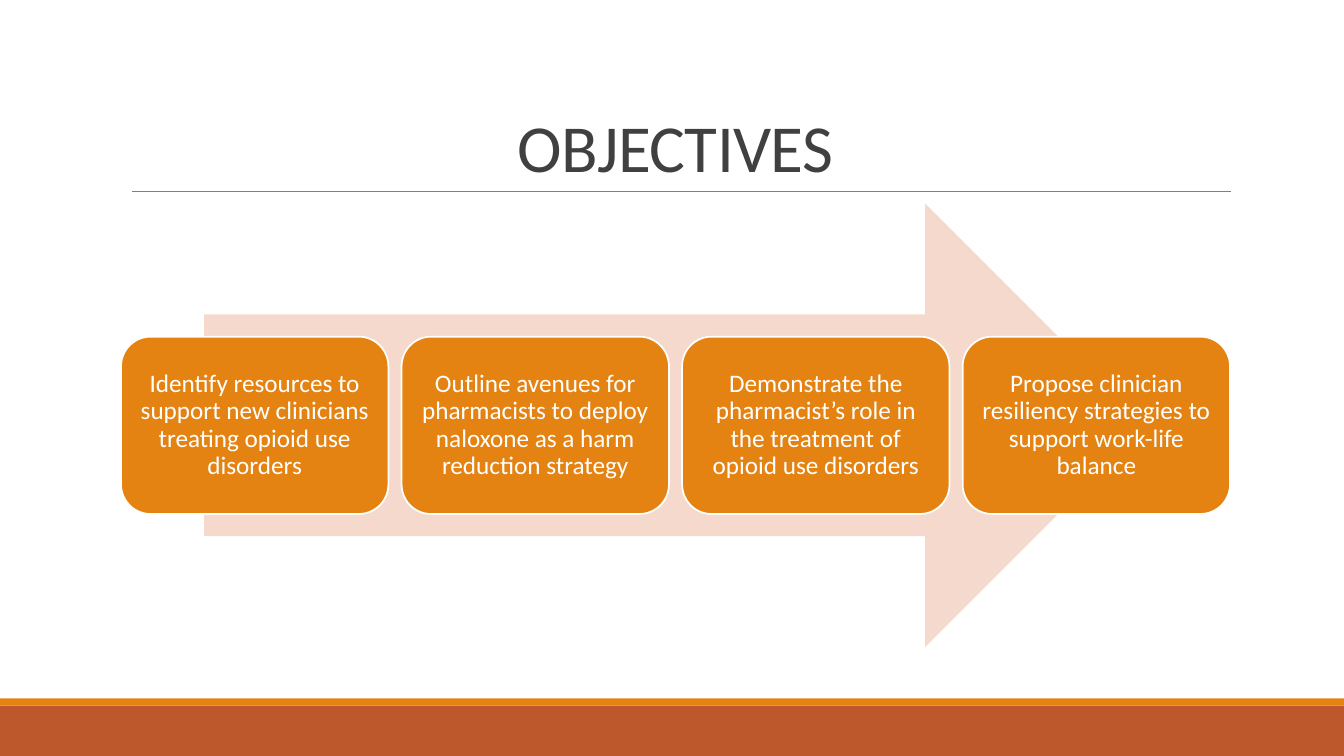
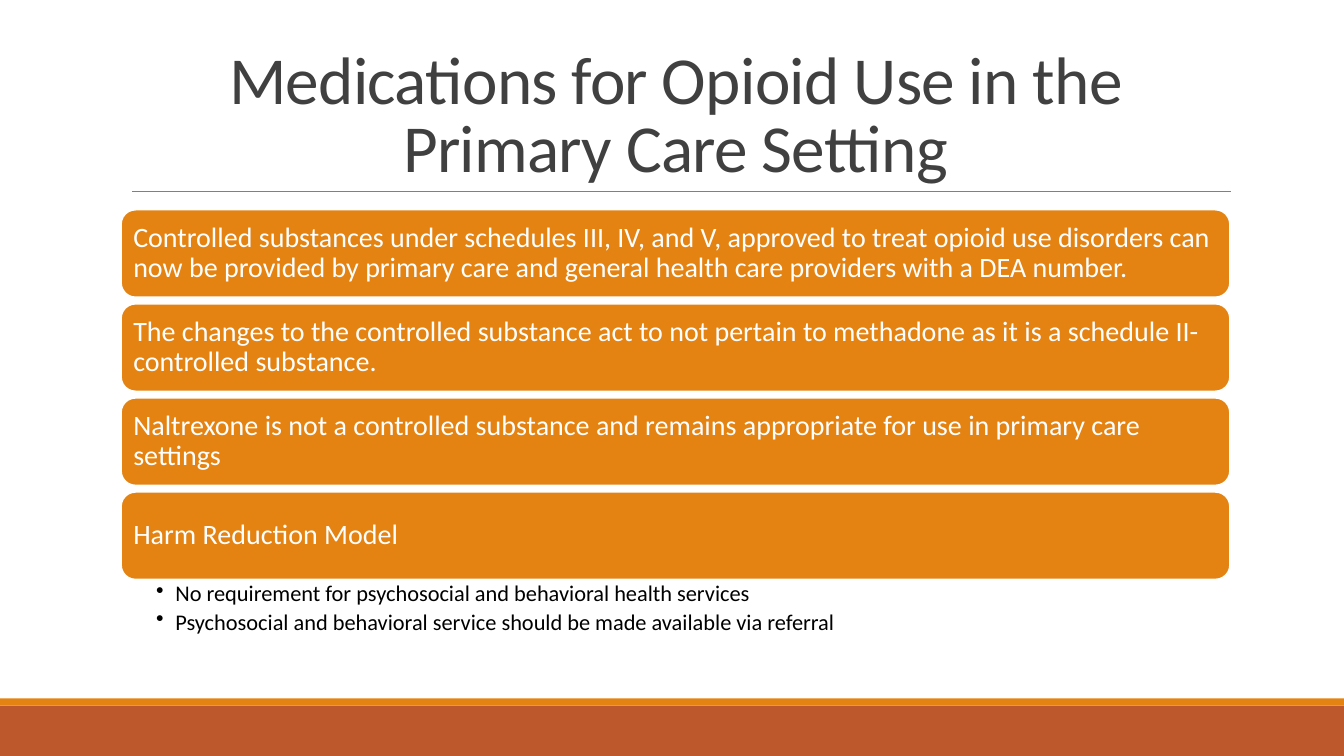
from lxml import etree
from pptx import Presentation
from pptx import util as u
from pptx.dml.color import RGBColor
from pptx.enum import shapes, text
from pptx.oxml import ns

FONT = "Calibri"
ORANGE, RUST, PEACH = "E48312", "BD582C", "F5D9CC"
WHITE, BLACK, DARK, GRAY = "FFFFFF", "000000", "404040", "808080"

OBJECTIVES = [
    "Identify resources to support new clinicians treating opioid use disorders",
    "Outline avenues for pharmacists to deploy naloxone as a harm reduction strategy",
    "Demonstrate the pharmacist’s role in the treatment of opioid use disorders",
    "Propose clinician resiliency strategies to support work-life balance",
]
MEDICATION_POINTS = [
    "Controlled substances under schedules III, IV, and V, approved to treat opioid use "
    "disorders can now be provided by primary care and general health care providers "
    "with a DEA number.",
    "The changes to the controlled substance act to not pertain to methadone as it is a "
    "schedule II-controlled substance.",
    "Naltrexone is not a controlled substance and remains appropriate for use in primary "
    "care settings",
    "Harm Reduction Model",
]
HARM_REDUCTION = [
    "No requirement for psychosocial and behavioral health services",
    "Psychosocial and behavioral service should be made available via referral",
]


def color(value):
    """Turn a hex string into a colour."""
    return RGBColor.from_string(value)


def add_block(slide, kind, box, fill, line=None):
    """Add a flat preset shape in box, given as left, top, width, height."""
    shape = slide.shapes.add_shape(kind, *map(u.Inches, box))
    shape.shadow.inherit = False
    shape.fill.solid()
    shape.fill.fore_color.rgb = color(fill)
    if line:
        shape.line.color.rgb = color(line)
        shape.line.width = u.Pt(1.25)
    else:
        shape.line.fill.background()
    return shape


def write(shape, lines, size, ink, align, anchor, insets, spacing=0.9, after=0):
    """Write one paragraph per line and return the paragraphs."""
    frame = shape.text_frame
    frame.word_wrap = True
    frame.vertical_anchor = anchor
    (frame.margin_left, frame.margin_top,
     frame.margin_right, frame.margin_bottom) = map(u.Inches, insets)
    frame.text = "\n".join(lines)
    for paragraph in frame.paragraphs:
        paragraph.alignment = align
        paragraph.line_spacing = spacing
        paragraph.space_after = u.Pt(after)
        for run in paragraph.runs:
            run.font.name = FONT
            run.font.size = u.Pt(size)
            run.font.color.rgb = color(ink)
    return frame.paragraphs


def add_base(presentation, title):
    """Add a blank slide with the footer bands, title and title rule."""
    slide = presentation.slides.add_slide(presentation.slide_layouts[6])
    rectangle = shapes.MSO_SHAPE.RECTANGLE
    add_block(slide, rectangle, (0, 7, 13.33, 0.5), RUST)
    add_block(slide, rectangle, (0, 6.93, 13.33, 0.07), ORANGE)
    ends = map(u.Inches, (1.31, 1.9, 12.21, 1.9))
    rule = slide.shapes.add_connector(shapes.MSO_CONNECTOR.STRAIGHT, *ends)
    rule.line.color.rgb = color(GRAY)
    rule.line.width = u.Pt(0.5)
    etree.SubElement(rule._element.spPr, ns.qn("a:effectLst"))
    heading = slide.shapes.add_textbox(*map(u.Inches, (1.2, 0.31, 11, 1.59)))
    paragraphs = write(heading, [title], 48, DARK, text.PP_ALIGN.CENTER,
                       text.MSO_ANCHOR.BOTTOM, (0.1, 0.05, 0.1, 0.05), 0.85)
    paragraphs[0].runs[0].font._element.set("spc", "-50")
    return slide


def add_card(slide, box, words, size, align, inset):
    """Add one rounded orange card with its text."""
    card = add_block(slide, shapes.MSO_SHAPE.ROUNDED_RECTANGLE, box, ORANGE, WHITE)
    write(card, [words], size, WHITE, align, text.MSO_ANCHOR.MIDDLE, [inset] * 4)


def add_process(slide, box, steps):
    """Place a row of cards across the middle of a wide arrow."""
    left, top, width, height = box
    arrow_width = 0.85 * width
    arrow_left = left + (width - arrow_width) / 2
    add_block(slide, shapes.MSO_SHAPE.RIGHT_ARROW,
              (arrow_left, top, arrow_width, height), PEACH)
    gap, card_height = 0.13, 0.4 * height
    card_width = (width - gap * (len(steps) - 1)) / len(steps)
    card_top = top + (height - card_height) / 2
    for index, step in enumerate(steps):
        card_left = left + index * (card_width + gap)
        add_card(slide, (card_left, card_top, card_width, card_height), step,
                 18, text.PP_ALIGN.CENTER, 0.07)


def add_stack(slide, box, points):
    """Fill the box with equal bars, one below the other."""
    left, top, width, height = box
    bar_height = 0.87
    pitch = (height - bar_height) / (len(points) - 1)
    for index, point in enumerate(points):
        add_card(slide, (left, top + index * pitch, width, bar_height), point,
                 20, text.PP_ALIGN.LEFT, 0.08)


def add_bullets(slide, box, lines):
    """Add a bulleted list with hanging indents."""
    bullets = slide.shapes.add_textbox(*map(u.Inches, box))
    paragraphs = write(bullets, lines, 16, BLACK, text.PP_ALIGN.LEFT,
                       text.MSO_ANCHOR.TOP, (0.35, 0.03, 0.16, 0.03), after=3)
    indent = u.Inches(0.19)
    for paragraph in paragraphs:
        properties = paragraph._p.get_or_add_pPr()
        properties.set("marL", str(indent))
        properties.set("indent", str(-indent))
        etree.SubElement(properties, ns.qn("a:buChar"), char="•")


def build_objectives(presentation):
    """Build the objectives slide."""
    slide = add_base(presentation, "OBJECTIVES")
    add_process(slide, (1.2, 2.02, 11, 4.4), OBJECTIVES)


def build_medications(presentation):
    """Build the medications slide."""
    slide = add_base(presentation, "Medications for Opioid Use in the Primary Care Setting")
    add_stack(slide, (1.2, 2.08, 11, 3.67), MEDICATION_POINTS)
    add_bullets(slide, (1.2, 5.75, 11, 0.6), HARM_REDUCTION)


def main():
    """Build and save the presentation."""
    presentation = Presentation()
    presentation.slide_width = u.Inches(13.33)
    presentation.slide_height = u.Inches(7.5)
    build_objectives(presentation)
    build_medications(presentation)
    presentation.save("out.pptx")


if __name__ == "__main__":
    main()
